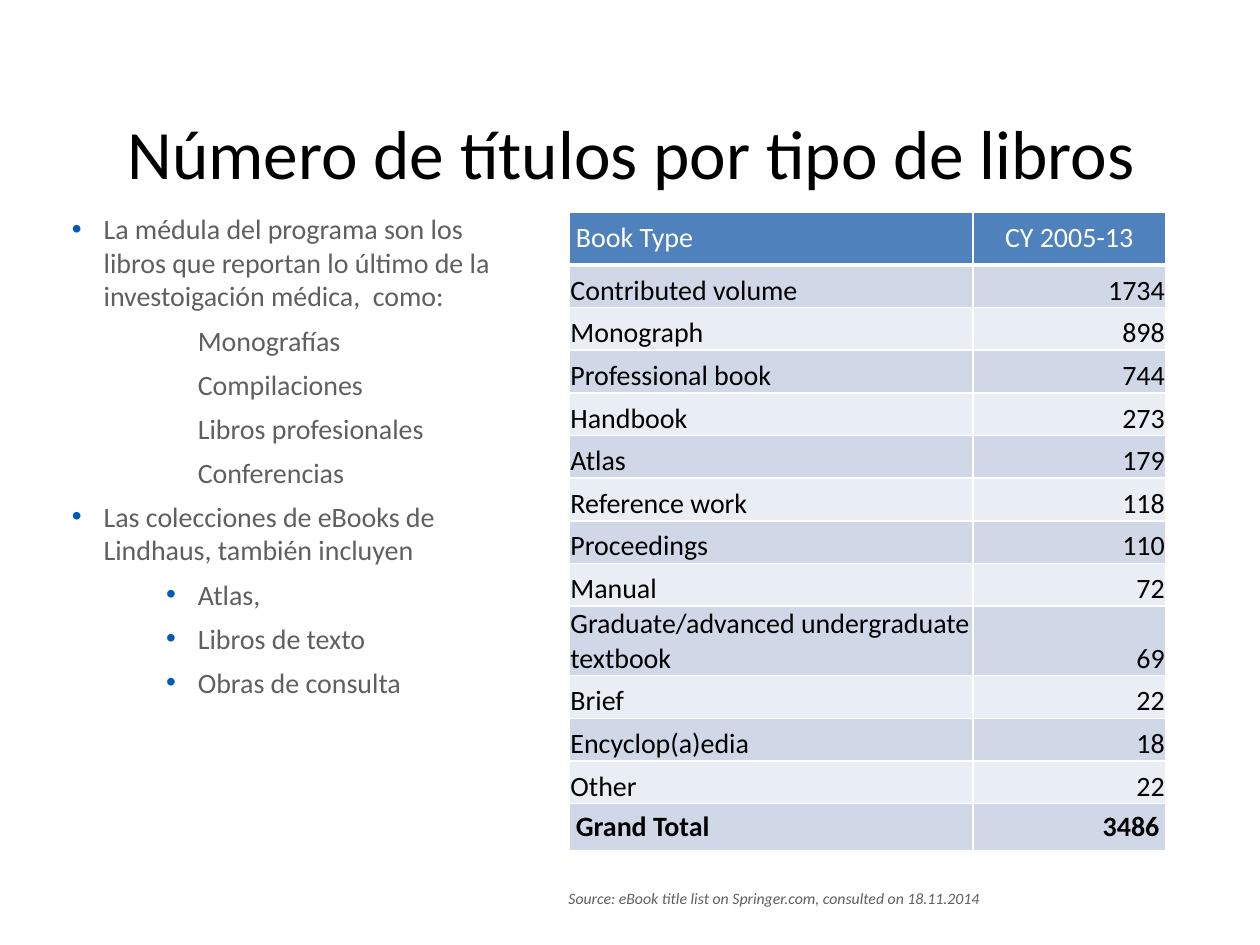
from dataclasses import dataclass
from typing import Optional

from lxml import etree
from pptx import Presentation
from pptx import util as u
from pptx.dml.color import RGBColor
from pptx.enum import text
from pptx.oxml import ns

Cm, Pt = u.Cm, u.Pt
ALIGN, ANCHOR = text.PP_ALIGN, text.MSO_ANCHOR


@dataclass(frozen=True)
class Theme:
    font: str = "Calibri"
    black: str = "000000"
    white: str = "FFFFFF"
    grey: str = "5F5F5F"
    bullet: str = "005BB9"
    header: str = "4F81BD"
    bands: tuple = ("E9EDF4", "D0D8E8")
    title_size: float = 39.6
    body_size: float = 16
    source_size: float = 9


@dataclass(frozen=True)
class Style:
    size: float
    color: str
    bold: bool = False
    italic: bool = False


@dataclass(frozen=True)
class Item:
    words: str
    indent: float
    bullet: bool = True
    level: int = 0


@dataclass(frozen=True)
class Row:
    label: str
    value: str
    height: float = 0.86
    inset: float = 0.02
    bottom: float = 0
    anchor: ANCHOR = ANCHOR.BOTTOM
    value_align: ALIGN = ALIGN.RIGHT
    color: str = Theme.black
    bold: bool = False
    header: bool = False


T = Theme()
HANG = 0.64
DEEP = 2.54

ITEMS = [
    Item("La médula del programa son los libros que reportan lo último "
         "de la investoigación médica,  como:", HANG),
    *(Item(words, DEEP, bullet=False) for words in
      ("Monografías", "Compilaciones", "Libros profesionales", "Conferencias")),
    Item("Las colecciones de eBooks de Lindhaus, también incluyen", HANG),
    *(Item(words, DEEP, level=2) for words in
      ("Atlas,", "Libros de texto", "Obras de consulta")),
]

ROWS = [
    Row("Book Type", "CY 2005-13", 1.07, 0.13, 0.13, ANCHOR.MIDDLE,
        ALIGN.CENTER, T.white, header=True),
    Row("Contributed volume", "1734"),
    Row("Monograph", "898"),
    Row("Professional book", "744"),
    Row("Handbook", "273"),
    Row("Atlas", "179"),
    Row("Reference work", "118"),
    Row("Proceedings", "110"),
    Row("Manual", "72"),
    Row("Graduate/advanced undergraduate textbook", "69", 1.22),
    Row("Brief", "22"),
    Row("Encyclop(a)edia", "18"),
    Row("Other", "22"),
    Row("Grand Total", "3486", inset=0.13, bottom=0.13, bold=True),
]


def add_run(p, words: str, style: Style) -> None:
    r = p.add_run()
    r.text = words
    f = r.font
    f.name, f.size = T.font, Pt(style.size)
    f.bold, f.italic = style.bold, style.italic
    f.color.rgb = RGBColor.from_string(style.color)


def add_box(s, left: float, top: float, width: float, height: float,
            wrap: bool = True):
    """Add a text box without insets and return its text frame."""
    tf = s.shapes.add_textbox(Cm(left), Cm(top), Cm(width), Cm(height)).text_frame
    tf.word_wrap = wrap
    tf.margin_left = tf.margin_top = tf.margin_right = tf.margin_bottom = 0
    return tf


def set_indent(p, item: Item) -> None:
    """Set the left indent and, for a bulleted item, the hanging bullet."""
    pPr = p._p.get_or_add_pPr()
    pPr.set("marL", str(Cm(item.indent)))
    pPr.set("indent", str(-Cm(HANG) if item.bullet else 0))
    if item.bullet:
        clr = etree.SubElement(pPr, ns.qn("a:buClr"))
        etree.SubElement(clr, ns.qn("a:srgbClr"), val=T.bullet)
        etree.SubElement(pPr, ns.qn("a:buFont"), typeface="Arial")
        etree.SubElement(pPr, ns.qn("a:buChar"), char="•")
    else:
        etree.SubElement(pPr, ns.qn("a:buNone"))


def add_title(s) -> None:
    tf = add_box(s, 1.4, 2.64, 22.66, 0.84)
    tf.vertical_anchor = ANCHOR.MIDDLE
    p = tf.paragraphs[0]
    p.alignment = ALIGN.CENTER
    add_run(p, "Número de títulos por tipo de libros",
            Style(T.title_size, T.black))


def add_items(s) -> None:
    tf = add_box(s, 1.45, 4.27, 8.99, 13.51)
    style = Style(T.body_size, T.grey)
    for i, item in enumerate(ITEMS):
        p = tf.add_paragraph() if i else tf.paragraphs[0]
        p.level = item.level
        set_indent(p, item)
        p.space_before = Pt(6 if i else 0)
        add_run(p, item.words, style)


def add_source(s) -> None:
    tf = add_box(s, 11.46, 17.91, 8.31, 0.38, wrap=False)
    tf.auto_size = text.MSO_AUTO_SIZE.SHAPE_TO_FIT_TEXT
    add_run(tf.paragraphs[0],
            "Source: eBook title list on Springer.com, consulted on 18.11.2014",
            Style(T.source_size, T.grey, italic=True))


def set_borders(cell, bottom: Optional[float] = None) -> None:
    tcPr = cell._tc.get_or_add_tcPr()
    for side in "LRTB":
        width = bottom if side == "B" and bottom else 1
        ln = etree.SubElement(tcPr, ns.qn(f"a:ln{side}"), w=str(Pt(width)))
        fill = etree.SubElement(ln, ns.qn("a:solidFill"))
        etree.SubElement(fill, ns.qn("a:srgbClr"), val=T.white)


def fill_cell(cell, words: str, align: ALIGN, row: Row, fill: str) -> None:
    set_borders(cell, 3 if row.header else None)
    cell.fill.solid()
    cell.fill.fore_color.rgb = RGBColor.from_string(fill)
    cell.margin_left = cell.margin_right = cell.margin_top = Cm(row.inset)
    cell.margin_bottom = Cm(row.bottom)
    cell.vertical_anchor = row.anchor
    p = cell.text_frame.paragraphs[0]
    p.alignment = align
    add_run(p, words, Style(T.body_size, row.color, row.bold))


def add_book_table(s) -> None:
    widths = (8.13, 3.89)
    height = sum(row.height for row in ROWS)
    table = s.shapes.add_table(len(ROWS), len(widths), Cm(11.48), Cm(4.27),
                               Cm(sum(widths)), Cm(height)).table
    table.horz_banding = False
    for column, width in zip(table.columns, widths):
        column.width = Cm(width)
    for i, row in enumerate(ROWS):
        table.rows[i].height = Cm(row.height)
        fill = T.header if row.header else T.bands[i % 2]
        fill_cell(table.cell(i, 0), row.label, ALIGN.LEFT, row, fill)
        fill_cell(table.cell(i, 1), row.value, row.value_align, row, fill)


def main() -> None:
    prs = Presentation()
    prs.slide_width, prs.slide_height = Cm(25.4), Cm(19.05)
    s = prs.slides.add_slide(prs.slide_layouts[6])
    add_book_table(s)
    add_title(s)
    add_source(s)
    add_items(s)
    prs.save("out.pptx")


if __name__ == "__main__":
    main()
